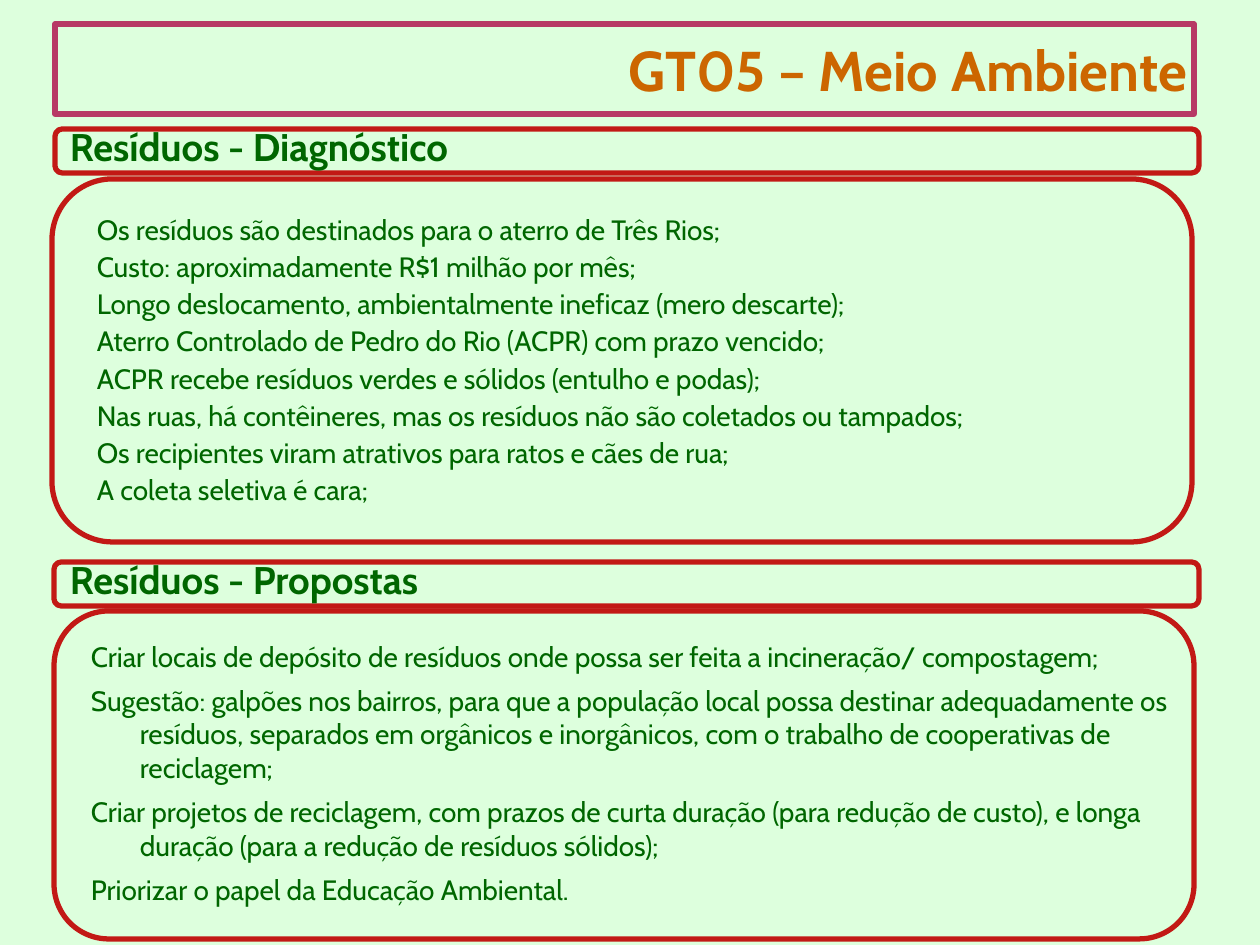
"""Build the GT05 environment slide: waste diagnosis and proposals."""
from dataclasses import dataclass

from lxml.etree import SubElement
from pptx import Presentation
from pptx.dml.color import RGBColor
from pptx.enum.shapes import MSO_SHAPE
from pptx.enum.text import MSO_ANCHOR, PP_ALIGN
from pptx.oxml.ns import qn
from pptx.util import Pt

TITLE = "GT05 – Meio Ambiente"
TITLE_BOX = (55, 24, 1139, 90)

SECTIONS = [
    {
        "heading": "Resíduos - Diagnóstico",
        "heading_frame": (55, 129, 1144, 44),
        "body_frame": (52, 179, 1140, 363),
        "body_area": (82, 195, 1095, 333),
        "line_spacing": 0.9,
        "space_after": 4,
        "items": [
            "Os resíduos são destinados para o aterro de Três Rios;",
            "Custo: aproximadamente R$1 milhão por mês;",
            "Longo deslocamento, ambientalmente ineficaz (mero descarte);",
            "Aterro Controlado de Pedro do Rio (ACPR) com prazo vencido;",
            "ACPR recebe resíduos verdes e sólidos (entulho e podas);",
            "Nas ruas, há contêineres, mas os resíduos não são coletados ou tampados;",
            "Os recipientes viram atrativos para ratos e cães de rua;",
            "A coleta seletiva é cara;",
        ],
    },
    {
        "heading": "Resíduos - Propostas",
        "heading_frame": (54, 562, 1145, 44),
        "body_frame": (54, 611, 1140, 328),
        "body_area": (76, 622, 1124, 301),
        "line_spacing": 1.0,
        "space_after": 6,
        "items": [
            "Criar locais de depósito de resíduos onde possa ser feita a incineração/ compostagem;",
            "Sugestão: galpões nos bairros, para que a população local possa destinar "
            "adequadamente os resíduos, separados em orgânicos e inorgânicos, com o "
            "trabalho de cooperativas de reciclagem;",
            "Criar projetos de reciclagem, com prazos de curta duração (para redução de "
            "custo), e longa duração (para a redução de resíduos sólidos);",
            "Priorizar o papel da Educação Ambiental.",
        ],
    },
]


@dataclass(frozen=True)
class Theme:
    font: str = "Cabin"
    background: str = "DDFFDD"
    text: str = "006600"
    title: str = "CC6600"
    title_line: str = "B73965"
    section_line: str = "C00000"
    line_width: int = 3
    title_size: int = 32
    heading_size: int = 22
    body_size: int = 16


THEME = Theme()
SCALE = 914400 / 126
HEADING_LEFT, HEADING_WIDTH, HEADING_HEIGHT, HEADING_DROP = 55, 1120, 36, 2
HANG = 49


def px(length):
    return round(length * SCALE)


def emu(box):
    return [px(length) for length in box]


def add_frame(slide, kind, box, color, opacity=100):
    frame = slide.shapes.add_shape(kind, *emu(box))
    frame.shadow.inherit = False
    frame.fill.background()
    frame.line.color.rgb = RGBColor.from_string(color)
    frame.line.width = Pt(THEME.line_width)
    if opacity < 100:
        tint = frame.line._ln.find(".//" + qn("a:srgbClr"))
        SubElement(tint, qn("a:alpha")).set("val", str(opacity * 1000))
    return frame


def write(holder, paragraphs, *, size, color=THEME.text, bold=False,
          align=PP_ALIGN.LEFT, insets=(15, 8), line_spacing=1.0,
          space_after=0, hang=0):
    area = holder.text_frame
    area.word_wrap = True
    area.vertical_anchor = MSO_ANCHOR.MIDDLE
    area.margin_left = area.margin_right = px(insets[0])
    area.margin_top = area.margin_bottom = px(insets[1])
    for index, words in enumerate(paragraphs):
        paragraph = area.add_paragraph() if index else area.paragraphs[0]
        paragraph.alignment = align
        paragraph.line_spacing = line_spacing
        paragraph.space_after = Pt(space_after)
        if hang:
            properties = paragraph._p.get_or_add_pPr()
            properties.set("marL", str(px(hang)))
            properties.set("indent", str(-px(hang)))
        run = paragraph.add_run()
        run.text = words
        run.font.name = THEME.font
        run.font.size = Pt(size)
        run.font.bold = bold
        run.font.color.rgb = RGBColor.from_string(color)


def add_section(slide, section):
    for key in ("heading_frame", "body_frame"):
        add_frame(slide, MSO_SHAPE.ROUNDED_RECTANGLE, section[key],
                  THEME.section_line, opacity=90)
    heading_top = section["heading_frame"][1] + HEADING_DROP
    heading = slide.shapes.add_textbox(
        *emu((HEADING_LEFT, heading_top, HEADING_WIDTH, HEADING_HEIGHT)))
    write(heading, [section["heading"]], size=THEME.heading_size, bold=True,
          line_spacing=0.9)
    body = slide.shapes.add_textbox(*emu(section["body_area"]))
    write(body, section["items"], size=THEME.body_size, hang=HANG,
          line_spacing=section["line_spacing"],
          space_after=section["space_after"])


def main():
    deck = Presentation()
    deck.slide_width, deck.slide_height = px(1260), px(945)
    slide = deck.slides.add_slide(deck.slide_layouts[6])
    slide.background.fill.solid()
    slide.background.fill.fore_color.rgb = RGBColor.from_string(THEME.background)
    title = add_frame(slide, MSO_SHAPE.RECTANGLE, TITLE_BOX, THEME.title_line)
    write(title, [TITLE], size=THEME.title_size, color=THEME.title, bold=True,
          align=PP_ALIGN.RIGHT, insets=(6, 0))
    for section in SECTIONS:
        add_section(slide, section)
    deck.save("out.pptx")


if __name__ == "__main__":
    main()
